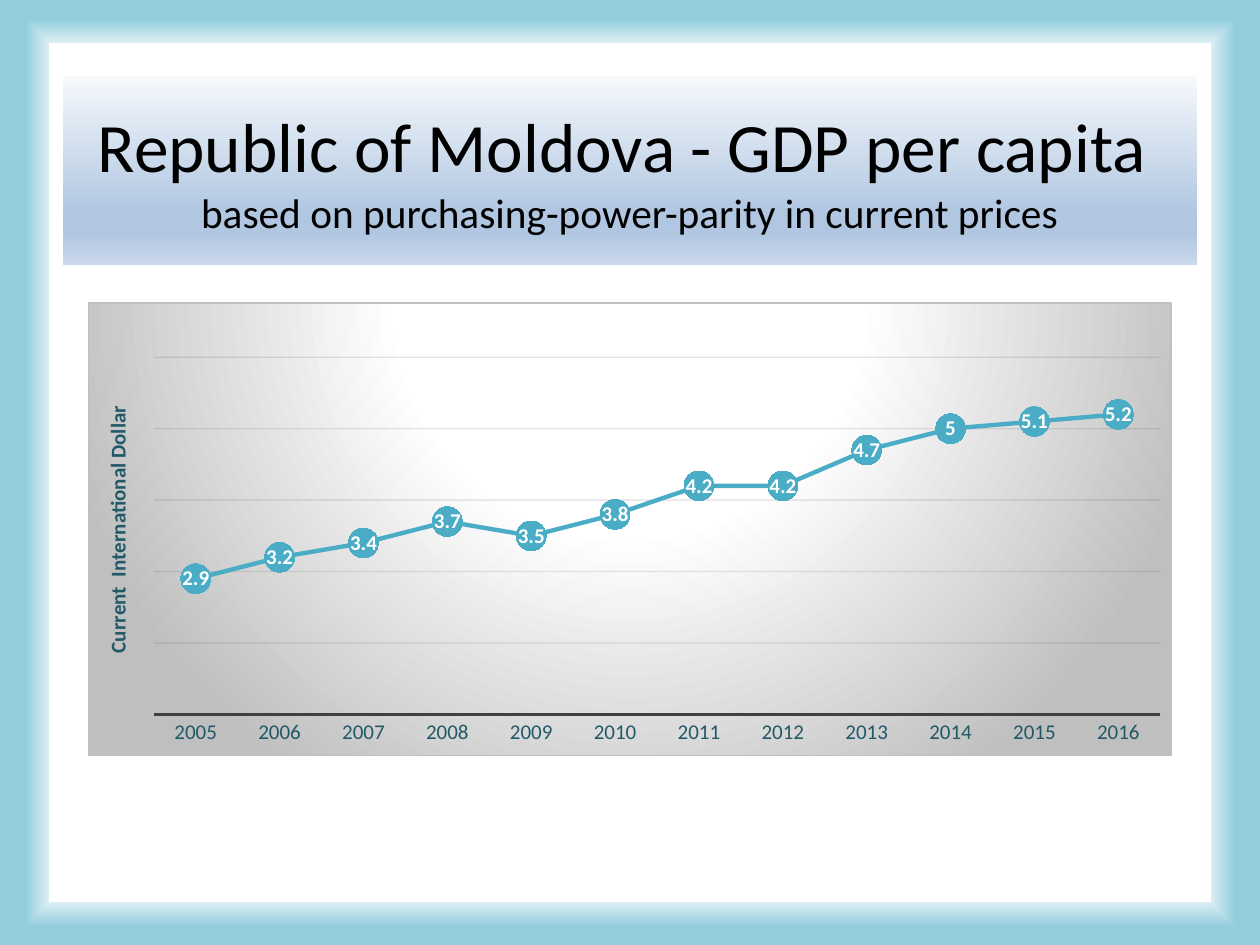
"""Build a slide with a line chart of GDP per capita in the Republic of Moldova."""
from dataclasses import dataclass

import pptx
import pptx.chart.data
import pptx.dml.color
import pptx.enum.chart
import pptx.enum.shapes
import pptx.enum.text
import pptx.oxml
import pptx.oxml.ns
import pptx.util

qn = pptx.oxml.ns.qn
NAMESPACES = pptx.oxml.ns.nsdecls("a", "c")


@dataclass(frozen=True)
class Theme:
    font: str = "Calibri"
    ink: str = "000000"
    label: str = "FFFFFF"
    axis_text: str = "215968"
    axis_line: str = "404040"
    grid: str = "0D0D0D"
    border: str = "BFBFBF"
    accent: str = "4BACC6"
    title_size: float = 39.6
    subtitle_size: float = 23.6
    chart_size: float = 12
    frame: tuple = ((91, "FFFFFF"), (91, "DBEEF4"), (96, "93CDDD"))
    banner: tuple = ((0, "F6F9FC"), (74, "B0C6E1"), (83, "B0C6E1"), (100, "CAD9EB"))
    spotlight: tuple = ((0, "FFFFFF"), (39, "FFFFFF"), (100, "BFBFBF"))


def rgb(color):
    return pptx.dml.color.RGBColor.from_string(color)


def gradient(stops, direction):
    marks = "".join(
        f'<a:gs pos="{place * 1000}"><a:srgbClr val="{color}"/></a:gs>' for place, color in stops
    )
    return pptx.oxml.parse_xml(
        f'<a:gradFill {NAMESPACES} rotWithShape="1"><a:gsLst>{marks}</a:gsLst>{direction}</a:gradFill>'
    )


def radial(kind, left, top, right, bottom):
    return (
        f'<a:path path="{kind}"><a:fillToRect l="{left * 1000}" t="{top * 1000}" '
        f'r="{right * 1000}" b="{bottom * 1000}"/></a:path>'
    )


def swap_gradient(holder, stops, direction):
    default = holder.find(".//" + qn("a:gradFill"))
    default.getparent().replace(default, gradient(stops, direction))


def place_in_chart(holder, index, **shares):
    for default in holder.findall(qn("c:layout")):
        holder.remove(default)
    modes = '<c:xMode val="edge"/><c:yMode val="edge"/>'
    target = '<c:layoutTarget val="inner"/>' if "w" in shares else ""
    sizes = "".join(f'<c:{side} val="{share}"/>' for side, share in shares.items())
    holder.insert(index, pptx.oxml.parse_xml(
        f"<c:layout {NAMESPACES}><c:manualLayout>{target}{modes}{sizes}</c:manualLayout></c:layout>"
    ))


class Deck:
    """Hold the theme and the current slide, and draw each kind of element on it."""

    def __init__(self, theme, width, height):
        self.theme = theme
        self.show = pptx.Presentation()
        self.show.slide_width = pptx.util.Inches(width)
        self.show.slide_height = pptx.util.Inches(height)
        self.slide = self.show.slides.add_slide(self.show.slide_layouts[6])

    def box(self, left, top, width, height):
        across, down = self.show.slide_width, self.show.slide_height
        return [round(share * side) for share, side in
                zip((left, top, width, height), (across, down, across, down))]

    def style(self, font, size, color, bold=False):
        font.name = self.theme.font
        font.size = pptx.util.Pt(size)
        font.bold = bold
        font.color.rgb = rgb(color)

    def stroke(self, line, color, width):
        line.color.rgb = rgb(color)
        line.width = pptx.util.Pt(width)

    def background(self):
        self.slide.background.fill.gradient()
        swap_gradient(self.slide.element, self.theme.frame, radial("shape", 50, 50, 50, 50))

    def banner(self, title, subtitle, *shares):
        banner = self.slide.shapes.add_shape(
            pptx.enum.shapes.MSO_SHAPE.RECTANGLE, *self.box(*shares))
        banner.shadow.inherit = False
        banner.line.fill.background()
        banner.fill.gradient()
        swap_gradient(banner.element, self.theme.banner, '<a:lin ang="5400000" scaled="0"/>')
        banner.text_frame.word_wrap = True
        banner.text_frame.vertical_anchor = pptx.enum.text.MSO_ANCHOR.MIDDLE
        heading = banner.text_frame.paragraphs[0]
        heading.alignment = pptx.enum.text.PP_ALIGN.CENTER
        for wording, size in ((title, self.theme.title_size), (subtitle, self.theme.subtitle_size)):
            if heading.runs:
                heading.add_line_break()
            run = heading.add_run()
            run.text = wording
            self.style(run.font, size, self.theme.ink)

    def line_chart(self, years, values, unit, *shares):
        data = pptx.chart.data.CategoryChartData()
        data.categories = years
        data.add_series("Series 1", values)
        chart = self.slide.shapes.add_chart(
            pptx.enum.chart.XL_CHART_TYPE.LINE_MARKERS, *self.box(*shares), data).chart
        chart.has_legend = chart.has_title = False
        self.style(chart.font, 10, self.theme.ink)
        place_in_chart(chart.element.find(".//" + qn("c:plotArea")), 0,
                       x=0.06, y=0.12, w=0.93, h=0.79)
        self.chart_area(chart)
        self.year_axis(chart.category_axis)
        self.value_axis(chart.value_axis, unit)
        chart.plots[0].vary_by_categories = False
        self.trend(chart.plots[0].series[0])

    def chart_area(self, chart):
        area = pptx.oxml.parse_xml(
            f'<c:spPr {NAMESPACES}><a:ln w="{pptx.util.Pt(0.75)}"><a:solidFill>'
            f'<a:srgbClr val="{self.theme.border}"/></a:solidFill></a:ln></c:spPr>')
        area.insert(0, gradient(self.theme.spotlight, radial("circle", 50, -80, 50, 180)))
        chart.element.find(qn("c:chart")).addnext(area)

    def year_axis(self, axis):
        axis.major_tick_mark = pptx.enum.chart.XL_TICK_MARK.NONE
        self.style(axis.tick_labels.font, self.theme.chart_size, self.theme.axis_text)
        self.stroke(axis.format.line, self.theme.axis_line, 1.5)

    def value_axis(self, axis, unit):
        axis.minimum_scale, axis.maximum_scale, axis.major_unit = 1, 6, 1
        axis.visible = False
        axis.has_major_gridlines = True
        gridlines = axis.major_gridlines.format
        self.stroke(gridlines.line, self.theme.grid, 0.75)
        for color in axis.format.element.iterfind(
                f"{qn('c:majorGridlines')}//{qn('a:srgbClr')}"):
            color.append(pptx.oxml.parse_xml(f'<a:alpha {NAMESPACES} val="10000"/>'))
        axis.has_title = True
        title = axis.axis_title
        run = title.text_frame.paragraphs[0].add_run()
        run.text = unit
        self.style(run.font, self.theme.chart_size, self.theme.axis_text, True)
        title_xml = title.format.element
        title_xml.find(".//" + qn("a:bodyPr")).set("rot", "-5400000")
        place_in_chart(title_xml, 1, x=0.01, y=0.22)

    def trend(self, series):
        series.smooth = False
        self.stroke(series.format.line, self.theme.accent, 2.5)
        series.marker.style = pptx.enum.chart.XL_MARKER_STYLE.CIRCLE
        series.marker.size = 17
        series.marker.format.fill.solid()
        series.marker.format.fill.fore_color.rgb = rgb(self.theme.accent)
        series.marker.format.line.fill.background()
        labels = series.data_labels
        labels.show_value = True
        labels.position = pptx.enum.chart.XL_LABEL_POSITION.CENTER
        self.style(labels.font, self.theme.chart_size, self.theme.label, True)


def main():
    deck = Deck(Theme(), 10, 7.5)
    deck.background()
    deck.banner("Republic of Moldova - GDP per capita ",
                "based on purchasing-power-parity in current prices",
                0.05, 0.08, 0.9, 0.2)
    deck.line_chart([str(year) for year in range(2005, 2017)],
                    (2.9, 3.2, 3.4, 3.7, 3.5, 3.8, 4.2, 4.2, 4.7, 5, 5.1, 5.2),
                    "Current  International Dollar",
                    0.07, 0.32, 0.86, 0.48)
    deck.show.save("out.pptx")


if __name__ == "__main__":
    main()
